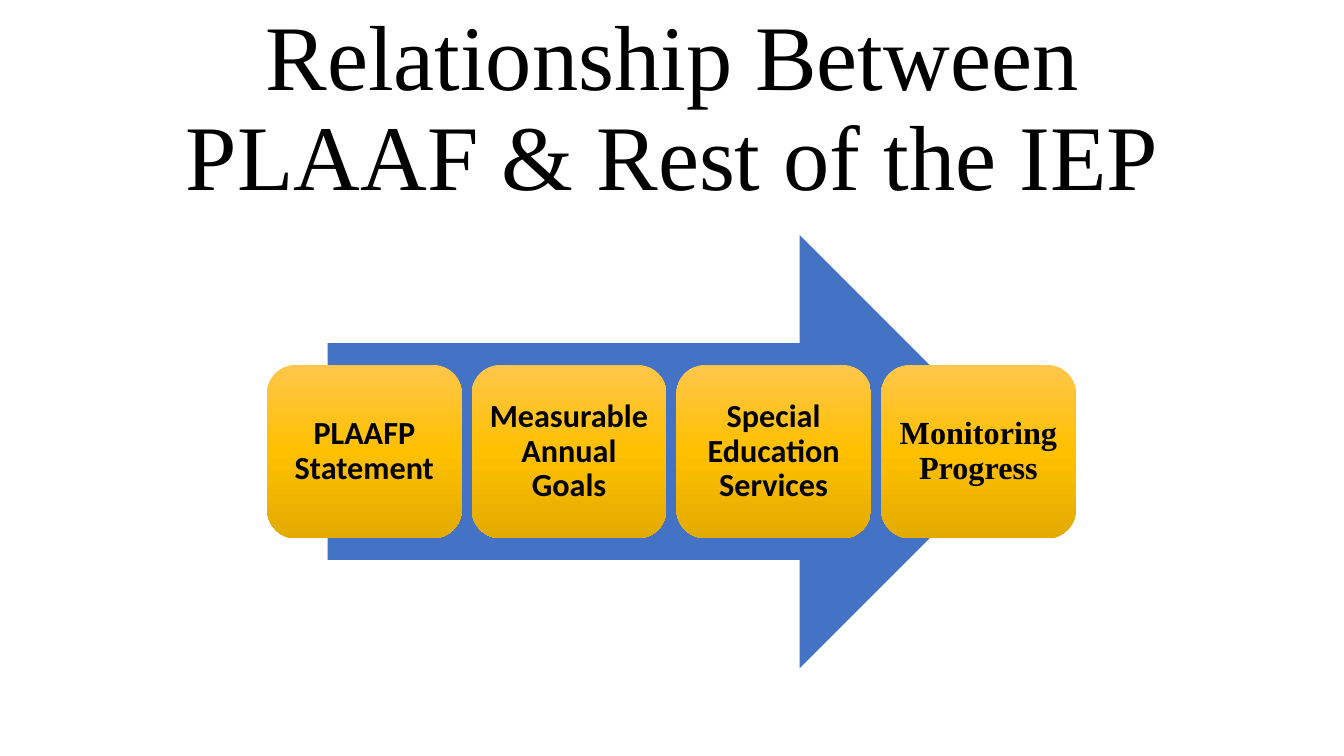
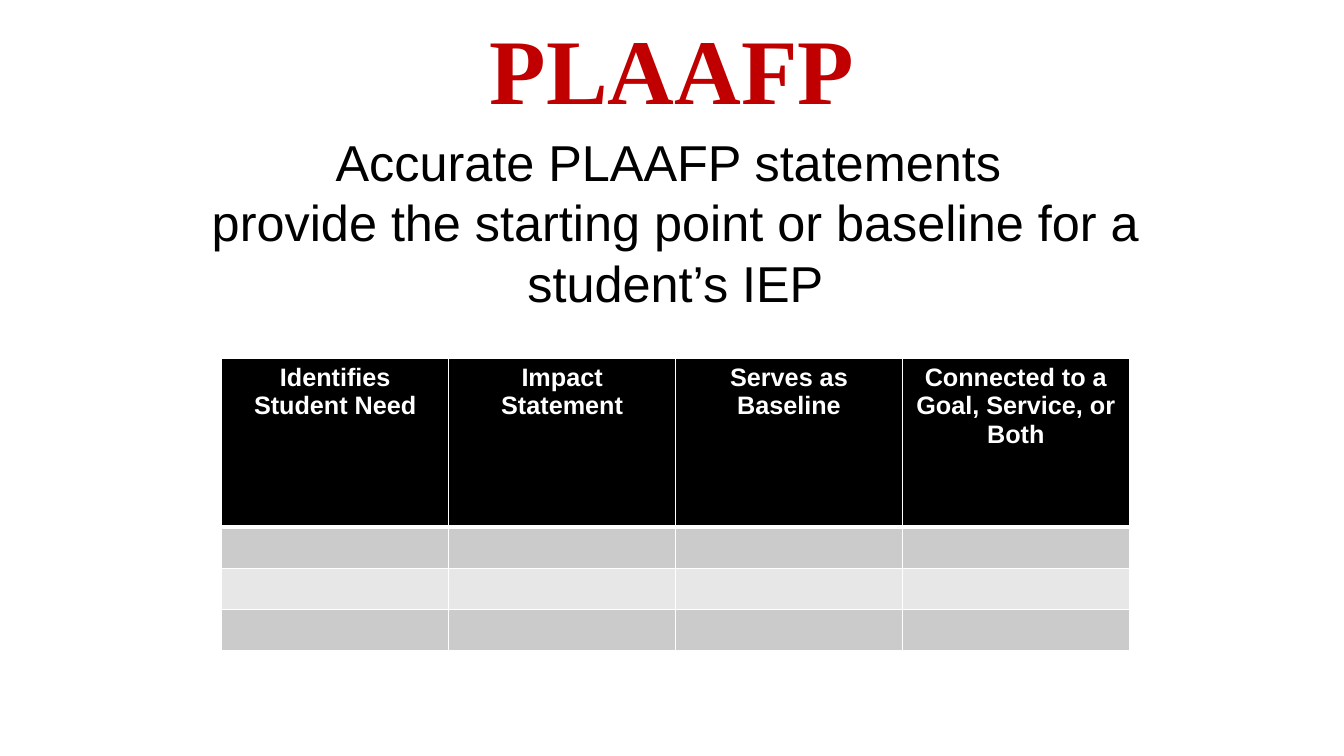
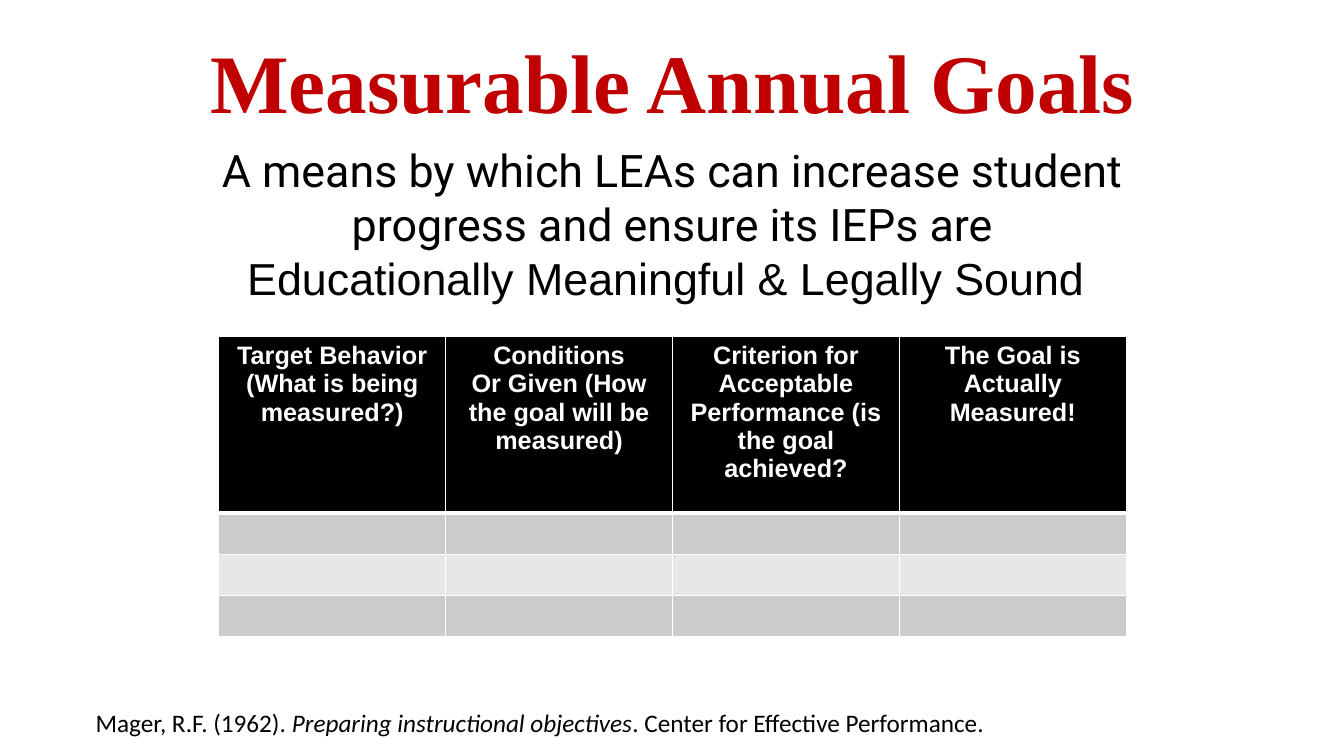
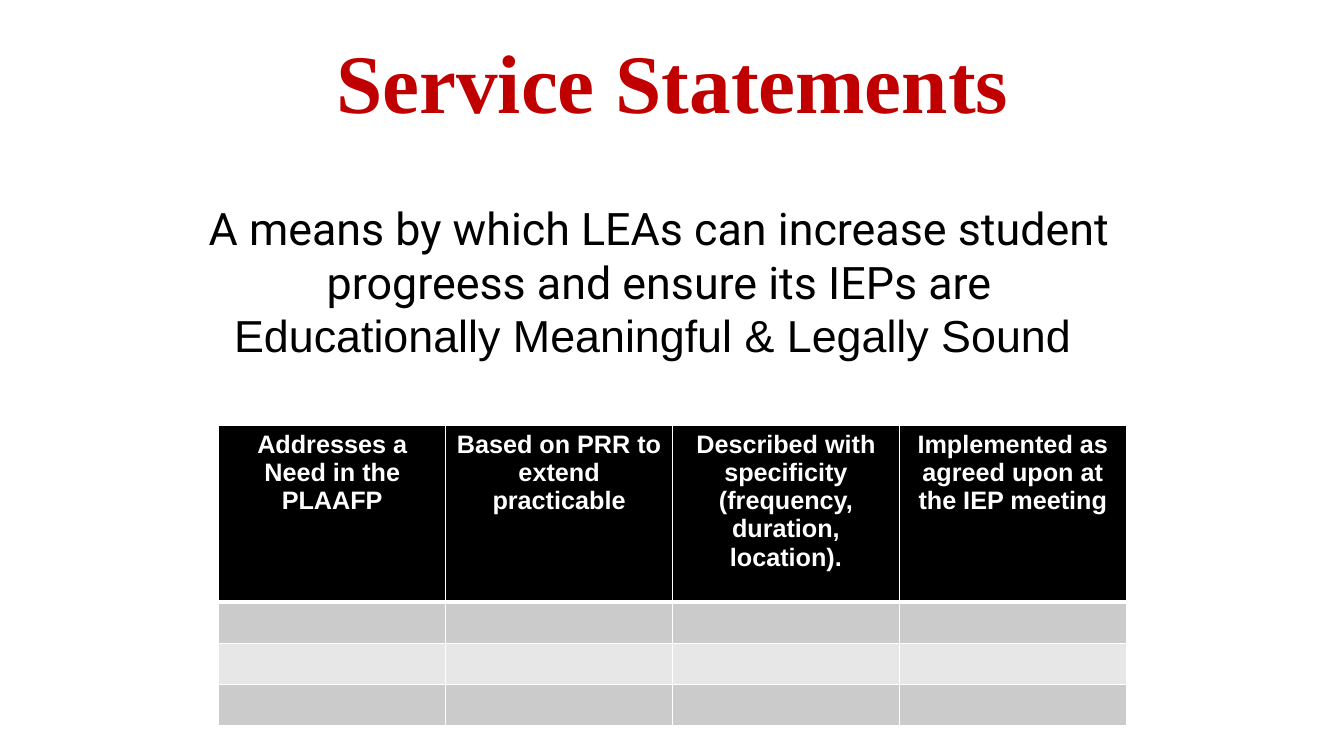
from copy import deepcopy

from lxml.etree import SubElement
from pptx import Presentation
from pptx.dml.color import RGBColor
from pptx.enum.shapes import MSO_SHAPE
from pptx.enum.text import MSO_ANCHOR, PP_ALIGN
from pptx.oxml.ns import qn
from pptx.util import Inches, Pt

BLACK, WHITE, RED, BLUE = "000000", "FFFFFF", "C00000", "4472C4"
DARK_BAND, LIGHT_BAND = "CBCBCB", "E7E7E7"
GOLD_STOPS = [(0, "FFC64B"), (0.5, "FFC000"), (1, "E3AB00")]
TITLE_FONT = "Times New Roman"


def color(hex_value):
    return RGBColor.from_string(hex_value)


def write(frame, paragraphs, font, size, ink=BLACK, bold=False,
          align=PP_ALIGN.CENTER, line_spacing=None):
    for index, text in enumerate(paragraphs):
        paragraph = frame.add_paragraph() if index else frame.paragraphs[0]
        paragraph.text = text
        paragraph.alignment = align
        paragraph.line_spacing = line_spacing
        paragraph.font.name = font
        paragraph.font.size = Pt(size)
        paragraph.font.bold = bold
        paragraph.font.color.rgb = color(ink)


prs = Presentation()
prs.slide_width, prs.slide_height = Inches(13.33), Inches(7.5)

titles = [
    ("Relationship Between PLAAF & Rest of the IEP", (1.42, 0.52, 10.5, 1.15), 66, BLACK, False),
    ("PLAAFP", (2.5, 0.22, 8.33, 1.03), 66, RED, True),
    ("Measurable Annual Goals", (0.68, 0.34, 11.98, 1.03), 59.4, RED, True),
    ("Service Statements", (0.68, 0.34, 11.98, 1.03), 59.4, RED, True),
]
slides = []
for text, box, size, ink, bold in titles:
    slide = prs.slides.add_slide(prs.slide_layouts[6])
    title = slide.shapes.add_textbox(*map(Inches, box)).text_frame
    title.word_wrap = True
    title.vertical_anchor = MSO_ANCHOR.MIDDLE
    write(title, [text], TITLE_FONT, size, ink, bold, line_spacing=0.9)
    slides.append(slide)
process, plaafp, goals, services = slides

arrow = process.shapes.add_shape(
    MSO_SHAPE.RIGHT_ARROW, Inches(3.25), Inches(2.33), Inches(6.83), Inches(4.3))
arrow.shadow.inherit = False
arrow.fill.solid()
arrow.fill.fore_color.rgb = color(BLUE)
arrow.line.fill.background()

steps = [
    ("PLAAFP Statement", "Calibri"),
    ("Measurable Annual Goals", "Calibri"),
    ("Special Education Services", "Calibri"),
    ("Monitoring Progress", TITLE_FONT),
]
step_width, step_gap = 1.93, 0.1
for index, (text, font) in enumerate(steps):
    step = process.shapes.add_shape(
        MSO_SHAPE.ROUNDED_RECTANGLE, Inches(2.65 + index * (step_width + step_gap)),
        Inches(3.62), Inches(step_width), Inches(1.72))
    step.shadow.inherit = False
    step.line.fill.background()
    step.fill.gradient()
    step.fill.gradient_angle = 270
    stop_list = step.element.spPr.find(".//" + qn("a:gsLst"))
    stop_list.append(deepcopy(stop_list[0]))
    for stop, (position, gold) in zip(step.fill.gradient_stops, GOLD_STOPS):
        stop.position = position
        stop.color.rgb = color(gold)
    label = step.text_frame
    label.word_wrap = True
    label.vertical_anchor = MSO_ANCHOR.MIDDLE
    label.margin_left = label.margin_right = Inches(0.05)
    write(label, [text], font, 23, bold=True, line_spacing=0.9)

baseline = plaafp.shapes.add_textbox(
    Inches(0.98), Inches(1.25), Inches(11.44), Inches(1.92)).text_frame
baseline.word_wrap = True
write(baseline, ["Accurate PLAAFP statements ",
                 "provide the starting point or baseline for a student’s IEP"], "Arial", 36)

purposes = [
    (goals, 2.05, 1.37, "progress"),
    (services, 1.92, 1.94, "progreess"),
]
for slide, left, top, progress in purposes:
    purpose = slide.shapes.add_textbox(
        Inches(left), Inches(top), Inches(9.24), Inches(1.72)).text_frame
    purpose.word_wrap = True
    write(purpose, [f"A means by which LEAs can increase student {progress} "
                    "and ensure its IEPs are "], "Roboto", 32)
    outcome = purpose.paragraphs[0].add_run()
    outcome.text = "Educationally Meaningful & Legally Sound "
    outcome.font.name = "Arial"

checklists = [
    (plaafp, 2.2, 3.56, 1.67, [
        ["Identifies Student Need"],
        ["Impact Statement"],
        ["Serves as Baseline"],
        ["Connected to a Goal, Service, or Both"]]),
    (goals, 2.17, 3.34, 1.75, [
        ["Target Behavior (What is being measured?)"],
        ["Conditions", "Or Given (How the goal will be measured)"],
        ["Criterion for Acceptable Performance (is the goal achieved?"],
        ["The Goal is Actually Measured!"]]),
    (services, 2.17, 4.22, 1.75, [
        ["Addresses a Need in the PLAAFP"],
        ["Based on PRR to extend practicable"],
        ["Described with specificity (frequency, duration, location)."],
        ["Implemented as agreed upon at the IEP meeting"]]),
]
row_fills = [BLACK, DARK_BAND, LIGHT_BAND, DARK_BAND]
row_height = 0.41
for slide, left, top, header_height, headers in checklists:
    heights = [header_height] + [row_height] * 3
    checklist = slide.shapes.add_table(
        len(heights), len(headers), Inches(left), Inches(top),
        Inches(9), Inches(sum(heights))).table
    checklist.horz_banding = False
    for row_index, height in enumerate(heights):
        checklist.rows[row_index].height = Inches(height)
        for column_index, header in enumerate(headers):
            cell = checklist.cell(row_index, column_index)
            if row_index == 0:
                write(cell.text_frame, header, "Arial", 18, WHITE, True)
            properties = cell._tc.get_or_add_tcPr()
            widths = {"L": 1, "R": 1, "T": 3 if row_index == 1 else 1,
                      "B": 3 if row_index == 0 else 1}
            for side, width in widths.items():
                border = SubElement(properties, qn(f"a:ln{side}"), w=str(Pt(width)))
                border_fill = SubElement(border, qn("a:solidFill"))
                SubElement(border_fill, qn("a:srgbClr"), val=WHITE)
            cell.fill.solid()
            cell.fill.fore_color.rgb = color(row_fills[row_index])

citation = goals.shapes.add_textbox(
    Inches(0.85), Inches(6.97), Inches(9.09), Inches(0.4)).text_frame
citation.word_wrap = False
write(citation, ["Mager, R.F. (1962). "], "Calibri", 18, align=PP_ALIGN.LEFT)
book = citation.paragraphs[0].add_run()
book.text = "Preparing instructional objectives"
book.font.italic = True
citation.paragraphs[0].add_run().text = ". Center for Effective Performance."

prs.save("out.pptx")
